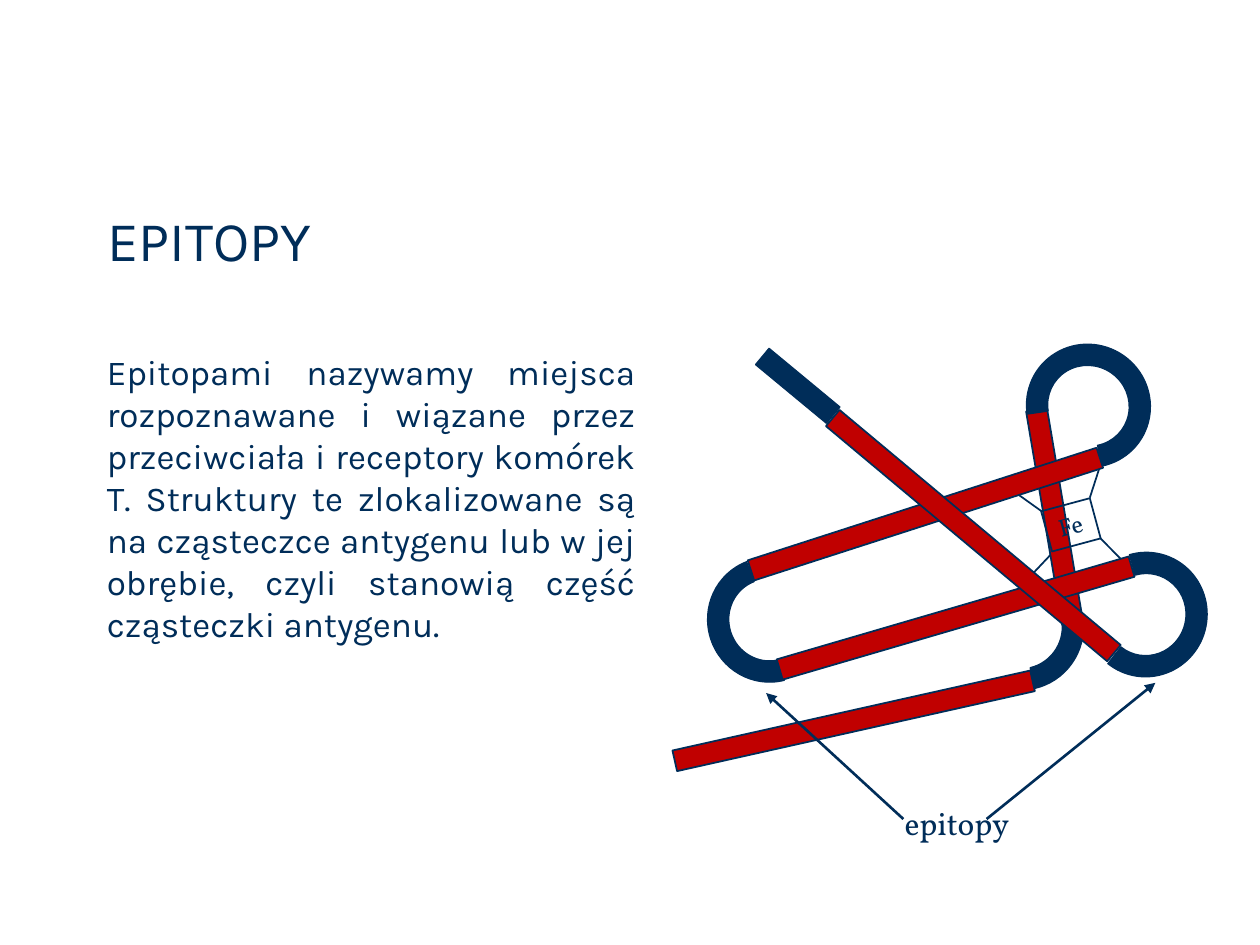
"""Build the slide on epitopes: a heading, a definition and a folded protein chain."""
import math

import lxml.etree
import pptx
import pptx.dml.color
import pptx.enum.shapes
import pptx.enum.text
import pptx.oxml.ns
import pptx.util

Pt = pptx.util.Pt
qn = pptx.oxml.ns.qn
NAVY = pptx.dml.color.RGBColor(0x00, 0x2D, 0x59)
RED = pptx.dml.color.RGBColor(0xC0, 0x00, 0x00)
RECTANGLE = pptx.enum.shapes.MSO_SHAPE.RECTANGLE
STRAIGHT = pptx.enum.shapes.MSO_CONNECTOR.STRAIGHT
ALIGN = pptx.enum.text.PP_ALIGN
ANCHOR = pptx.enum.text.MSO_ANCHOR

TITLE = "EPITOPY"
DEFINITION = (
    "Epitopami nazywamy miejsca rozpoznawane i wiązane przez przeciwciała "
    "i receptory komórek T. Struktury te zlokalizowane są na cząsteczce "
    "antygenu lub w jej obrębie, czyli stanowią część cząsteczki antygenu."
)
LABEL = "epitopy"
IRON = "Fe"

CHAIN_WIDTH = 12.1
LOOP_SIZE = (71.2, 70)
IRON_BONDS = [
    ((628.6, 307.4), (640.8, 319.7)),
    ((601.2, 316.1), (589.7, 328.3)),
    ((622.8, 284.4), (628.6, 266.4)),
    ((595.4, 292.3), (580.3, 281.5)),
]
CHAIN = [
    ("bar", (487.8, 411.9), 209.5, 347.4, RED, 1),
    ("loop", (583.9, 358.9), 84, 125.4),
    ("bar", (602.6, 295.2), 123.8, 80.4, RED, 1),
    ("loop", (622, 231.9), 266, 34.8),
    ("bar", (528.8, 293.8), 209.5, 342.1, RED, 1),
    ("loop", (439.4, 354.2), 173, 252.4),
    ("bar", (546.1, 353.2), 209.5, 343.7, RED, 1),
    ("loop", (654.8, 351.2), 234, 101.2),
    ("bar", (556.2, 306.1), 209.5, 39.9, RED, 1),
    ("bar", (455.9, 220.5), 52.6, 39.6, NAVY, 0.75),
]
POINTERS = [((563.8, 468), (660.2, 390.2)), ((516.2, 468), (437.8, 396))]


def add_line(shapes, start, end, width, arrow=False):
    line = shapes.add_connector(STRAIGHT, *map(Pt, start + end))
    line.line.color.rgb = NAVY
    line.line.width = Pt(width)
    properties = line._element.spPr
    if arrow:
        lxml.etree.SubElement(properties.find(qn("a:ln")), qn("a:tailEnd"), type="triangle")
    lxml.etree.SubElement(properties, qn("a:effectLst"))


def paint(shape, fill, line_width):
    shape.shadow.inherit = False
    if fill is None:
        shape.fill.background()
    else:
        shape.fill.solid()
        shape.fill.fore_color.rgb = fill
    shape.line.color.rgb = NAVY
    shape.line.width = Pt(line_width)


def place(shape, left, top, width, height):
    shape.left, shape.top, shape.width, shape.height = map(Pt, (left, top, width, height))


def add_bar(shapes, centre, length, angle, fill, line_width, thickness=CHAIN_WIDTH):
    left, top = centre[0] - length / 2, centre[1] - thickness / 2
    bar = shapes.add_shape(RECTANGLE, Pt(left), Pt(top), Pt(length), Pt(thickness))
    bar.rotation = angle
    paint(bar, fill, line_width)
    return bar


def arc_points(inset, start, end, count):
    """Return the start point and the Bezier control points of an arc in the loop's box."""
    width, height = LOOP_SIZE
    step = math.radians(end - start) / count
    handle = 4 / 3 * math.tan(step / 4)

    def point(turn, pull):
        across = math.cos(turn) - pull * math.sin(turn)
        down = math.sin(turn) + pull * math.cos(turn)
        return Pt(width / 2 + (width / 2 - inset) * across), Pt(height / 2 + (height / 2 - inset) * down)

    turns = [math.radians(start) + step * index for index in range(count + 1)]
    points = [point(turns[0], 0)]
    for first, last in zip(turns, turns[1:]):
        points += [point(first, handle), point(last, -handle), point(last, 0)]
    return points


def add_segment(outline, kind, points):
    segment = lxml.etree.SubElement(outline, qn(kind))
    for across, down in points:
        lxml.etree.SubElement(segment, qn("a:pt"), x=str(across), y=str(down))


def add_loop(shapes, centre, sweep, angle):
    start, end = -90 - sweep / 2, -90 + sweep / 2
    count = 2 if sweep <= 180 else 4
    outer = arc_points(0, start, end, count)
    inner = arc_points(CHAIN_WIDTH, end, start, count)
    builder = shapes.build_freeform(*outer[0])
    builder.add_line_segments(outer[1:] + inner, close=True)
    loop = builder.convert_to_shape()

    width, height = LOOP_SIZE
    outline = next(loop._element.iter(qn("a:path")))
    for child in list(outline):
        outline.remove(child)
    outline.set("w", str(Pt(width)))
    outline.set("h", str(Pt(height)))
    for kind, points in (("a:moveTo", outer), ("a:lnTo", inner)):
        add_segment(outline, kind, points[:1])
        for index in range(1, len(points), 3):
            add_segment(outline, "a:cubicBezTo", points[index:index + 3])
    lxml.etree.SubElement(outline, qn("a:close"))

    place(loop, centre[0] - width / 2, centre[1] - height / 2, width, height)
    loop.rotation = angle
    paint(loop, NAVY, 0.75)


def write(shape, text, font, size, align=ALIGN.LEFT, anchor=ANCHOR.TOP, wrap=True):
    frame = shape.text_frame
    frame.text = text
    frame.word_wrap = wrap
    frame.vertical_anchor = anchor
    para = frame.paragraphs[0]
    para.alignment = align
    span = para.runs[0].font
    span.name = font
    span.size = Pt(size)
    span.color.rgb = NAVY
    return para


def main():
    deck = pptx.Presentation()
    deck.slide_width, deck.slide_height = Pt(720), Pt(540)
    page = deck.slides.add_slide(deck.slide_layouts[5])
    shapes = page.shapes

    place(shapes.title, 54, 108.7, 612, 61.2)
    write(shapes.title, TITLE, "Karla", 32, anchor=ANCHOR.MIDDLE).line_spacing = 0.9

    body = shapes.add_textbox(Pt(54), Pt(196.6), Pt(316.4), Pt(288.7))
    write(body, DEFINITION, "Karla", 20, ALIGN.JUSTIFY)

    for start, end in IRON_BONDS:
        add_line(shapes, start, end, 1)
    builders = {"bar": add_bar, "loop": add_loop}
    for kind, *geometry in CHAIN:
        builders[kind](shapes, *geometry)
    iron = add_bar(shapes, (612, 299.9), 28.8, 344.9, None, 1, 23.8)
    write(iron, IRON, "Vollkorn", 14, wrap=False)

    label = shapes.add_textbox(Pt(509.8), Pt(455.8), Pt(156.2), Pt(28.8))
    write(label, LABEL, "Vollkorn", 18)
    for start, end in POINTERS:
        add_line(shapes, start, end, 1.5, arrow=True)

    deck.save("out.pptx")


if __name__ == "__main__":
    main()
